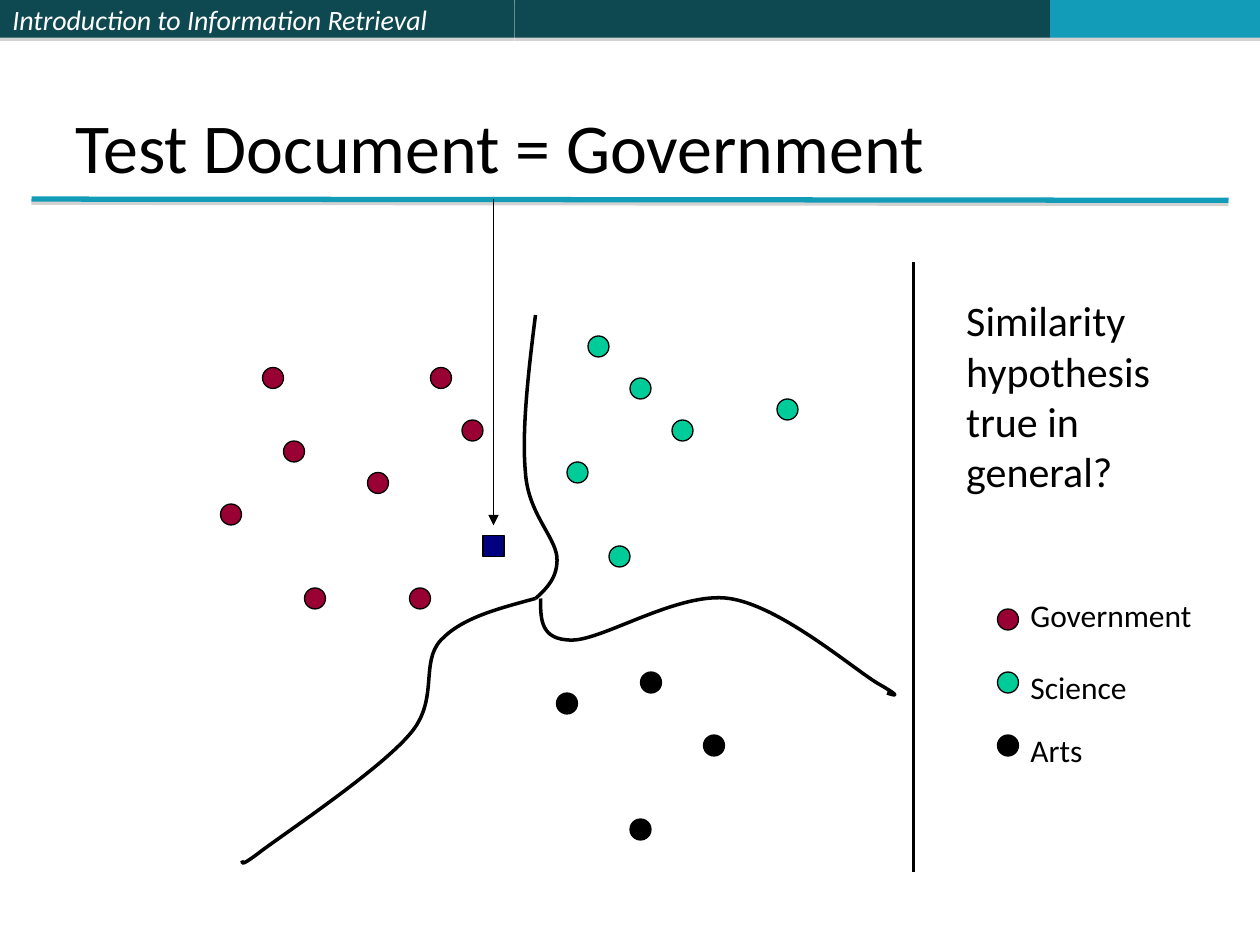
"""Build the slide that classifies a test document among three topic regions."""
from lxml import etree
from pptx import Presentation
from pptx import util as u
from pptx.dml.color import RGBColor
from pptx.enum import shapes, text
from pptx.oxml import parse_xml
from pptx.oxml.ns import nsdecls, qn

COLORS = {"dark": "0E4851", "teal": "139CB7", "white": "FFFFFF", "black": "000000",
          "government": "990033", "science": "00CC99", "arts": "000000", "test": "000080"}
RGB = {name: RGBColor.from_string(value) for name, value in COLORS.items()}
SHAPE = shapes.MSO_SHAPE
ANCHOR = text.MSO_ANCHOR
CELL = 1 / 12

prs = Presentation()
prs.slide_width, prs.slide_height = u.Inches(10), u.Inches(7.5)
s = prs.slides.add_slide(prs.slide_layouts[6])


def add_shape(kind, x, y, w, h, fill, outlined=True):
    sp = s.shapes.add_shape(kind, *map(u.Inches, (x, y, w, h)))
    sp.fill.solid()
    sp.fill.fore_color.rgb = RGB[fill]
    if outlined:
        sp.line.color.rgb = RGB["black"]
        sp.line.width = u.Pt(0.75)
    else:
        sp.line.fill.background()
    sp.shadow.inherit = False
    return sp


def write(sp, lines, size, color="black", anchor=ANCHOR.TOP, wrap=False, italic=False):
    tf = sp.text_frame
    tf.word_wrap = wrap
    tf.auto_size = text.MSO_AUTO_SIZE.NONE if wrap else text.MSO_AUTO_SIZE.SHAPE_TO_FIT_TEXT
    tf.vertical_anchor = anchor
    tf.text = "\n".join(lines)
    for p in tf.paragraphs:
        p.alignment = text.PP_ALIGN.LEFT
        p.font.name, p.font.size, p.font.italic = "Calibri", u.Pt(size), italic
        p.font.color.rgb = RGB[color]


bars = [add_shape(SHAPE.RECTANGLE, x * CELL, 0, w * CELL, 0.3, fill, False)
        for x, w, fill in [(0, 49, "dark"), (49, 51, "dark"), (100, 20, "teal")]]
write(bars[0], ["Introduction to Information Retrieval"], 16, "white", ANCHOR.MIDDLE, True, True)

rules = []
for ends, color, width in [((0.25, 1.58, 9.75, 1.59), "teal", 3),
                           ((7.25, 2.08, 7.25, 6.92), "black", 2.25),
                           ((47 * CELL, 1.58, 47 * CELL, 4.17), "black", 0.75)]:
    c = s.shapes.add_connector(shapes.MSO_CONNECTOR.STRAIGHT, *map(u.Inches, ends))
    c.line.color.rgb = RGB[color]
    c.line.width = u.Pt(width)
    c._element.spPr.append(parse_xml(f"<a:effectLst {nsdecls('a')}/>"))
    rules.append(c)
title_rule, divider, arrow = rules
arrow.line._get_or_add_ln().append(parse_xml(f'<a:tailEnd {nsdecls("a")} type="triangle"/>'))

for sp in bars + [title_rule]:
    sp._element.spPr[-1].append(parse_xml(
        f'<a:outerShdw {nsdecls("a")} blurRad="0" dist="22860" dir="5400000" rotWithShape="0">'
        '<a:srgbClr val="808080"><a:alpha val="35000"/></a:srgbClr></a:outerShdw>'))

for box, lines, size, anchor, wrap in [
        ((0.5, 0.11, 8.99, 1.43), ["Test Document = Government"], 40, ANCHOR.BOTTOM, True),
        ((8.08, 4.68, 1.5, 0.4), ["Government"], 18, ANCHOR.TOP, False),
        ((8.08, 5.25, 0.98, 0.4), ["Science"], 18, ANCHOR.TOP, False),
        ((8.08, 5.75, 0.62, 0.4), ["Arts"], 18, ANCHOR.TOP, False),
        ((7.57, 2.29, 1.68, 1.72), ["Similarity", "hypothesis", "true in", "general?"],
         24, ANCHOR.TOP, False)]:
    write(s.shapes.add_textbox(*map(u.Inches, box)), lines, size, anchor=anchor, wrap=wrap)

boundaries = [
    [(4.25, 4.75), (3.96, 4.83), (3.67, 4.9), (3.5, 5.08), (3.33, 5.26), (3.49, 5.56),
     (3.25, 5.83), (3.01, 6.11), (2.31, 6.58), (2.08, 6.75), (1.86, 6.92), (1.94, 6.82),
     (1.92, 6.83)],
    [(4.25, 4.75), (4.34, 4.67), (4.43, 4.58), (4.42, 4.42), (4.4, 4.25), (4.19, 4.07),
     (4.17, 3.75), (4.14, 3.43), (4.19, 2.97), (4.25, 2.5)],
    [(4.29, 4.75), (4.29, 4.92), (4.29, 5.08), (4.54, 5.08), (4.79, 5.08), (5.39, 4.69),
     (5.79, 4.75), (6.19, 4.81), (6.75, 5.29), (6.96, 5.42), (7.17, 5.54), (7.1, 5.52),
     (7.04, 5.5)]]
for knots in boundaries:
    start, *controls = [tuple(map(u.Inches, knot)) for knot in knots]
    builder = s.shapes.build_freeform(*start)
    builder.add_line_segments(controls, close=False)
    curve = builder.convert_to_shape()
    segments = list(curve._element.iter(qn("a:lnTo")))
    outline = segments[0].getparent()
    for i in range(0, len(segments), 3):
        bezier = etree.SubElement(outline, qn("a:cubicBezTo"))
        for segment in segments[i:i + 3]:
            bezier.append(segment[0])
            outline.remove(segment)
    curve.fill.background()
    curve.line.color.rgb = RGB["black"]
    curve.line.width = u.Pt(2)
    curve.shadow.inherit = False

documents = {
    "government": [(95, 58), (25, 35), (27, 42), (29, 56), (41, 35), (21, 48), (35, 45),
                   (44, 40), (39, 56)],
    "science": [(95, 64), (54, 44), (56, 32), (58, 52), (60, 36), (74, 38), (64, 40)],
    "arts": [(95, 70), (61, 64), (53, 66), (60, 78), (67, 70)],
    "test": [(46, 51)]}
for topic, spots in documents.items():
    kind = SHAPE.RECTANGLE if topic == "test" else SHAPE.OVAL
    for column, row in spots:
        add_shape(kind, column * CELL, row * CELL, 2 * CELL, 2 * CELL, topic)

prs.save("out.pptx")
